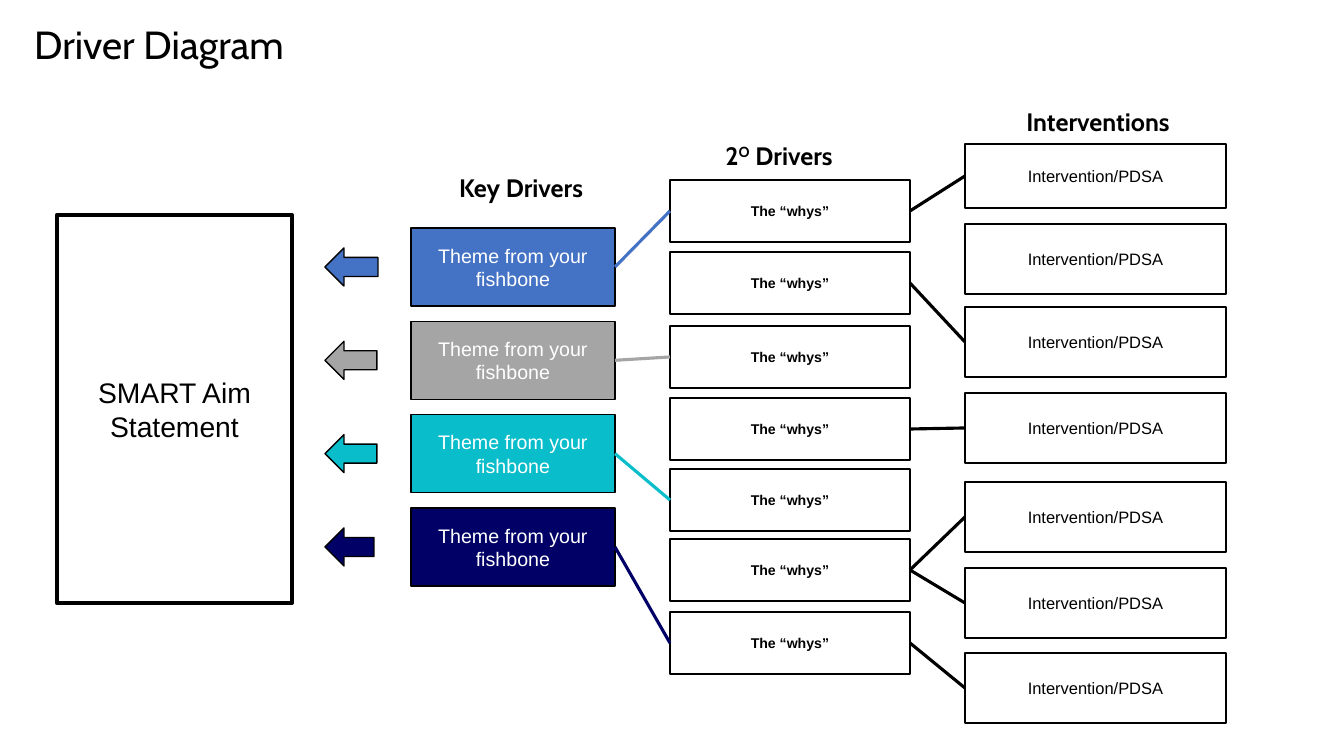
import pptx
import pptx.util
import pptx.dml.color
import pptx.enum.shapes
import pptx.enum.text
import pptx.oxml.ns
import lxml.etree

PX = 914400 / 100.8
SHAPE = pptx.enum.shapes.MSO_SHAPE
ALIGN = pptx.enum.text.PP_ALIGN
ANCHOR = pptx.enum.text.MSO_ANCHOR
LEFT, RIGHT = 1, 3  # connection sites of a rectangle

COLORS = {
    "black": "000000", "white": "FFFFFF", "blue": "4472C4",
    "gray": "A5A5A5", "teal": "09BDCB", "navy": "000066",
}
THEMES = {"blue": 53, "gray": 52, "teal": 52, "navy": 49}  # arrow widths
WHY_TOPS = [0, 72, 146, 218, 289, 359, 432]
PLAN_TOPS = [0, 80, 163, 249, 338, 424, 509]
PLAN_HIGHS = [64] + [70] * 6
WHY_PLANS = [(0, 0), (1, 2), (3, 3), (5, 4), (5, 5), (6, 6)]


def px(*nums):
    return [pptx.util.Emu(round(n * PX)) for n in nums]


def rgb(color):
    return pptx.dml.color.RGBColor.from_string(COLORS[color])


def write(shape, text, size, font="Arial", color="black", bold=False,
          align=ALIGN.CENTER, anchor=ANCHOR.MIDDLE, wrap=True):
    """Fill a shape with one paragraph; text between ^ marks is raised."""
    frame = shape.text_frame
    frame.word_wrap = wrap
    frame.auto_size = pptx.enum.text.MSO_AUTO_SIZE.NONE
    frame.vertical_anchor = anchor
    para = frame.paragraphs[0]
    para.alignment = align
    for i, part in enumerate(text.split("^")):
        run = para.add_run()
        run.text = part
        run.font.name = font
        run.font.size = pptx.util.Pt(size)
        run.font.bold = bold
        run.font.color.rgb = rgb(color)
        if i % 2:
            run.font._element.set("baseline", "30000")


def draw(slide, kind, box, fill=None, line=1):
    shape = slide.shapes.add_shape(kind, *px(*box))
    shape.shadow.inherit = False
    if fill:
        shape.fill.solid()
        shape.fill.fore_color.rgb = rgb(fill)
    else:
        shape.fill.background()
    shape.line.color.rgb = rgb("black")
    shape.line.width = pptx.util.Pt(line)
    return shape


def link(slide, start, end, color="black"):
    """Join the right side of one box to the left side of another."""
    line = slide.shapes.add_connector(
        pptx.enum.shapes.MSO_CONNECTOR.STRAIGHT, 0, 0, 0, 0)
    line.begin_connect(start, RIGHT)
    line.end_connect(end, LEFT)
    line.line.color.rgb = rgb(color)
    line.line.width = pptx.util.Pt(2.25)
    lxml.etree.SubElement(line._element.spPr, pptx.oxml.ns.qn("a:effectLst"))


def add_title(slide, box):
    title = slide.shapes.title
    title.left, title.top, title.width, title.height = px(*box)
    write(title, "Driver Diagram", 28, font="Cabin", align=ALIGN.LEFT)


def add_head(slide, text, box):
    write(slide.shapes.add_textbox(*px(*box)), text, 18, font="Cabin", bold=True)


def add_aim(slide, box):
    aim = draw(slide, SHAPE.RECTANGLE, box, line=3)
    write(aim, "SMART Aim Statement", 20.2)


def add_keys(slide, box):
    """Stack the key drivers, each with an arrow towards the aim."""
    x, y, wide, high = box
    add_head(slide, "Key Drivers", (x + 6, y - 58, 208, 34))
    keys = []
    tall = 78
    step = (high - tall) / (len(THEMES) - 1)
    for i, (color, span) in enumerate(THEMES.items()):
        top = y + i * step
        key = draw(slide, SHAPE.RECTANGLE, (x, top, wide, tall), color)
        write(key, "Theme from your fishbone", 14, color="white")
        draw(slide, SHAPE.LEFT_ARROW, (x - 86, top + 20, span, 38), color)
        keys.append(key)
    return keys


def add_stack(slide, box, tops, highs, text, **style):
    x, y, wide = box
    cells = []
    for top, high in zip(tops, highs):
        cell = draw(slide, SHAPE.RECTANGLE, (x, y + top, wide, high), "white")
        write(cell, text, **style)
        cells.append(cell)
    return cells


def add_whys(slide, box):
    x, y, wide = box
    add_head(slide, "2^O^ Drivers", (x + 6, y - 38, 206, 27))
    return add_stack(slide, box, WHY_TOPS, [62] * len(WHY_TOPS),
                     "The “whys”", size=10.1, bold=True)


def add_plans(slide, box):
    x, y, wide = box
    add_head(slide, "Interventions", (x + 30, y - 36, 206, 27))
    return add_stack(slide, box, PLAN_TOPS, PLAN_HIGHS,
                     "Intervention/PDSA", size=11.8)


def main():
    deck = pptx.Presentation()
    deck.slide_width, deck.slide_height = px(1344, 756)
    slide = deck.slides.add_slide(deck.slide_layouts[5])
    add_title(slide, (24, 15, 548, 58))
    add_aim(slide, (57, 215, 235, 388))
    keys = add_keys(slide, (411, 228, 204, 358))
    whys = add_whys(slide, (670, 180, 240))
    plans = add_plans(slide, (965, 144, 261))
    for key, why, color in zip(keys, whys[::2], THEMES):
        link(slide, key, why, color)
    for why, plan in WHY_PLANS:
        link(slide, whys[why], plans[plan])
    deck.save("out.pptx")


if __name__ == "__main__":
    main()
